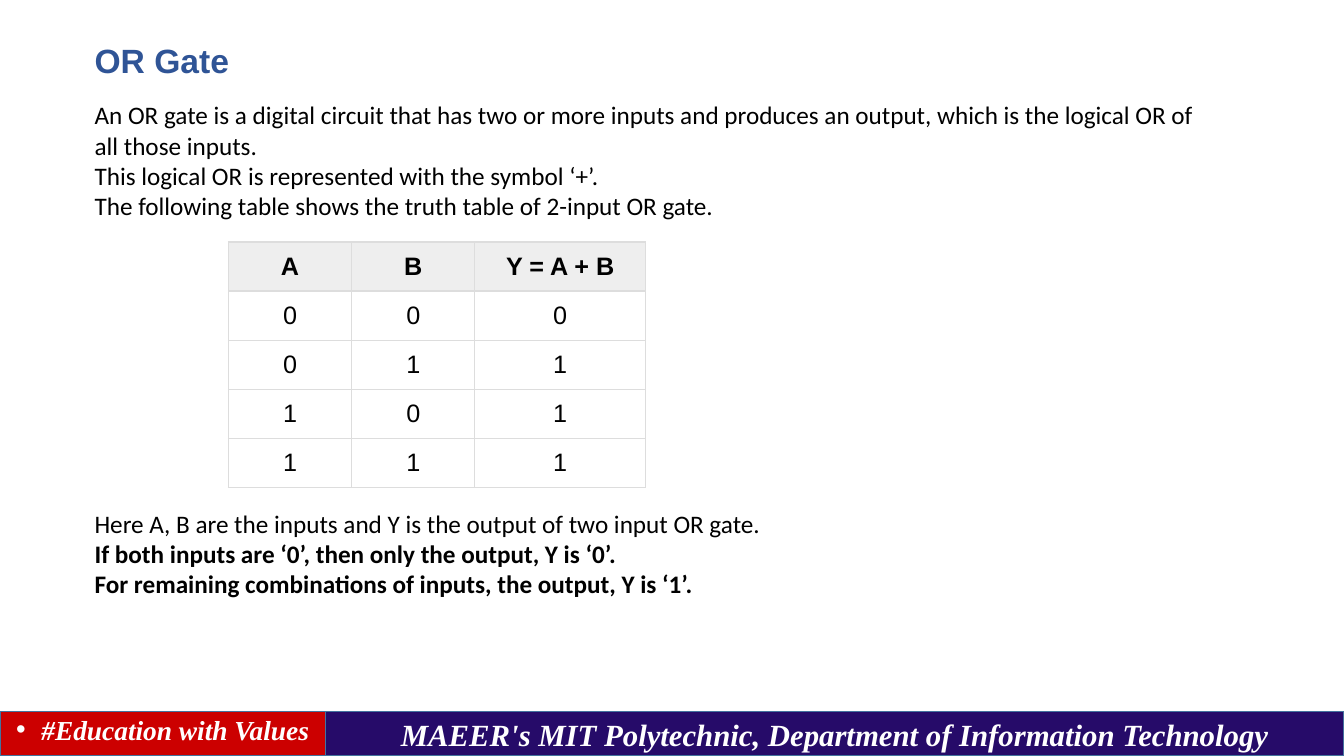
from lxml.etree import SubElement
from pptx import Presentation
from pptx.dml.color import RGBColor
from pptx.enum.shapes import MSO_SHAPE
from pptx.enum.text import MSO_ANCHOR, PP_ALIGN
from pptx.oxml.ns import qn
from pptx.util import Pt

HUES = {"red": "CC0000", "navy": "260B69", "edge": "43739E", "title": "2F5496",
        "black": "000000", "white": "FFFFFF", "head": "EEEEEE", "rule": "DDDDDD"}
TEXTS = [
    ((60.5, 25.2, 838.8, 60.5), "Arial", 24, "title", PP_ALIGN.JUSTIFY, [("OR Gate", True)]),
    ((60.5, 67.7, 817.9, 94.3), "Calibri", 18, "black", PP_ALIGN.LEFT, [
        ("An OR gate is a digital circuit that has two or more inputs and produces "
         "an output, which is the logical OR of all those inputs.", False),
        ("This logical OR is represented with the symbol ‘+’.", False),
        ("The following table shows the truth table of 2-input OR gate.", False)]),
    ((60.5, 359.3, 825.1, 72.7), "Calibri", 18, "black", PP_ALIGN.LEFT, [
        ("Here A, B are the inputs and Y is the output of two input OR gate.", False),
        ("If both inputs are ‘0’, then only the output, Y is ‘0’.", True),
        ("For remaining combinations of inputs, the output, Y is ‘1’.", True)]),
]
TRUTH = [("A", "B", "Y = A + B"), (0, 0, 0), (0, 1, 1), (1, 0, 1), (1, 1, 1)]
COLS, ROW, ORIGIN = (88, 88, 122), 35.1, (163.2, 172.8)
BARS = [("#Education with Values", 232.4, "red", 19.6, True),
        ("MAEER's MIT Polytechnic, Department of Information Technology",
         727.6, "navy", 22, False)]
WIDE, HIGH, BAR = 960, 540, 31.8


def hue(name):
    """Return a named colour."""
    return RGBColor.from_string(HUES[name])


def style(para, face, size, tint, bold, align):
    """Set the font and alignment of a paragraph."""
    font = para.font
    font.name, font.size, font.bold = face, Pt(size), bold
    font.color.rgb = hue(tint)
    para.alignment = align


def add_text(slide, area, face, size, tint, align, lines):
    """Add a text box with one paragraph per line."""
    frame = slide.shapes.add_textbox(*map(Pt, area)).text_frame
    frame.word_wrap = True
    for i, (text, bold) in enumerate(lines):
        para = frame.add_paragraph() if i else frame.paragraphs[0]
        para.text = text
        style(para, face, size, tint, bold, align)


def add_edges(cell):
    """Draw a thin rule on all four sides of a cell."""
    props = cell._tc.get_or_add_tcPr()
    for i, side in enumerate(("lnL", "lnR", "lnT", "lnB")):
        line = props.makeelement(qn(f"a:{side}"), {"w": str(Pt(1))})
        fill = SubElement(line, qn("a:solidFill"))
        SubElement(fill, qn("a:srgbClr"), val=HUES["rule"])
        props.insert(i, line)


def add_truth(slide):
    """Add the truth table."""
    area = (*ORIGIN, sum(COLS), ROW * len(TRUTH))
    table = slide.shapes.add_table(len(TRUTH), len(COLS), *map(Pt, area)).table
    table.first_row = table.horz_banding = False
    for col, width in zip(table.columns, COLS):
        col.width = Pt(width)
    for r, values in enumerate(TRUTH):
        table.rows[r].height = Pt(ROW)
        for c, value in enumerate(values):
            cell = table.cell(r, c)
            cell.margin_left = cell.margin_right = Pt(6)
            cell.margin_top = cell.margin_bottom = Pt(6)
            if r:
                cell.fill.background()
            else:
                cell.fill.solid()
                cell.fill.fore_color.rgb = hue("head")
            para = cell.text_frame.paragraphs[0]
            para.text = str(value)
            para.line_spacing = 1.07
            style(para, "Arial", 18, "black", r == 0, PP_ALIGN.CENTER)
            add_edges(cell)


def add_bar(slide, left, text, width, tint, size, bullet):
    """Add one part of the footer."""
    area = (left, HIGH - BAR, width, BAR)
    bar = slide.shapes.add_shape(MSO_SHAPE.RECTANGLE, *map(Pt, area))
    bar.shadow.inherit = False
    bar.fill.solid()
    bar.fill.fore_color.rgb = hue(tint)
    bar.line.color.rgb = hue("edge")
    bar.line.width = Pt(1)
    frame = bar.text_frame
    frame.word_wrap = True
    frame.vertical_anchor = MSO_ANCHOR.MIDDLE
    para = frame.paragraphs[0]
    para.text = text
    if bullet:
        props = para._p.get_or_add_pPr()
        props.set("marL", str(Pt(18)))
        props.set("indent", str(-Pt(18)))
        SubElement(props, qn("a:buFont"), typeface="Arial")
        SubElement(props, qn("a:buChar"), char="•")
        para.line_spacing = 0.7
    style(para, "Times New Roman", size, "white", True, PP_ALIGN.CENTER)
    para.font.italic = True


def main():
    """Build and save the slide."""
    deck = Presentation()
    deck.slide_width, deck.slide_height = Pt(WIDE), Pt(HIGH)
    slide = deck.slides.add_slide(deck.slide_layouts[6])
    left = 0
    for bar in BARS:
        add_bar(slide, left, *bar)
        left += bar[1]
    for text in TEXTS:
        add_text(slide, *text)
    add_truth(slide)
    deck.save("out.pptx")


if __name__ == "__main__":
    main()
